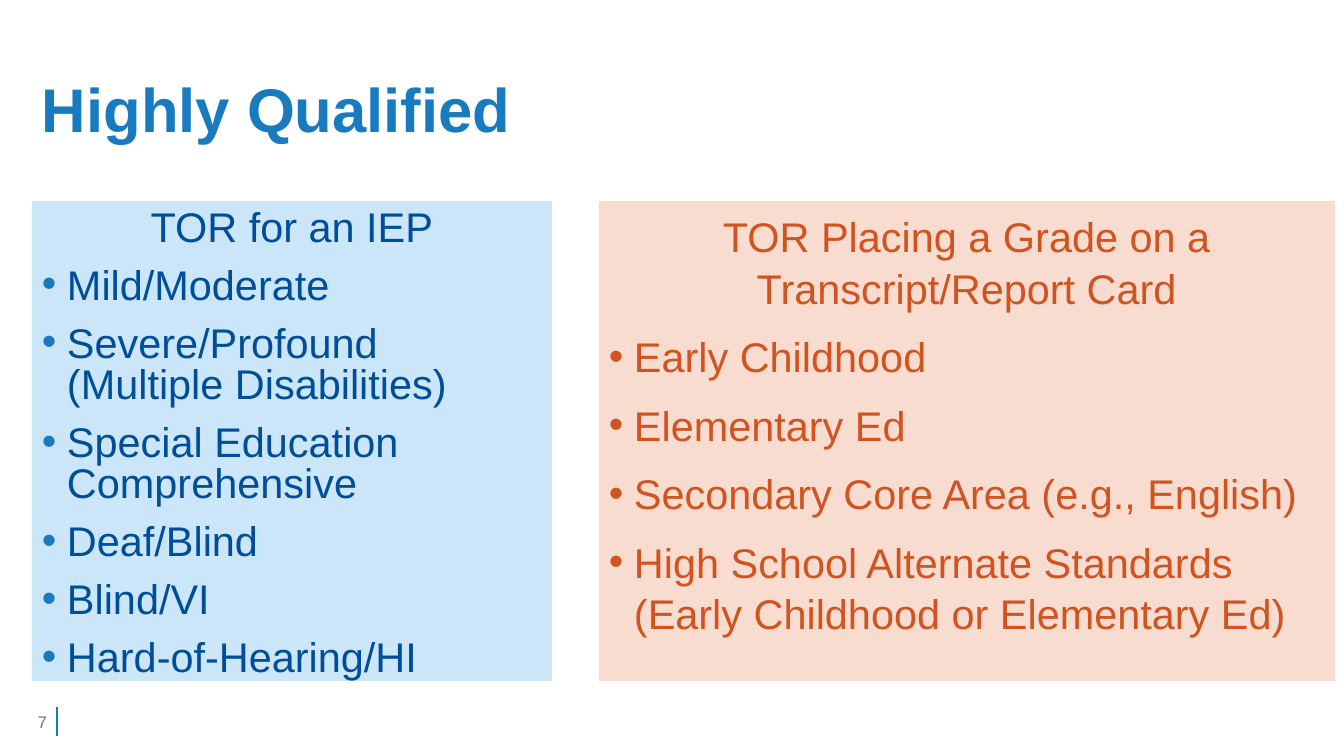
from lxml import etree
from pptx import Presentation
from pptx import util as u
from pptx.dml.color import RGBColor
from pptx.enum import shapes, text
from pptx.oxml import ns

TITLE = "Highly Qualified"
PAGE_NUMBER = "7"
PANELS = [
    dict(left=32, width=520, fill="iep_fill", color="iep_text", bullet="accent", spacing=0.83,
         heading="TOR for an IEP",
         items=["Mild/Moderate", "Severe/Profound (Multiple Disabilities)",
                "Special Education Comprehensive", "Deaf/Blind", "Blind/VI",
                "Hard-of-Hearing/HI"]),
    dict(left=599, width=736, fill="grade_fill", color="grade_text", bullet="grade_text", spacing=1.04,
         heading="TOR Placing a Grade on a Transcript/Report Card",
         items=["Early Childhood", "Elementary Ed", "Secondary Core Area (e.g., English)",
                "High School Alternate Standards (Early Childhood or Elementary Ed)"]),
]
THEME = dict(
    font="Arial", title_size=44, body_size=29.6, number_size=12, paragraph_gap=12,
    accent="187BC0", muted="787878",
    iep_fill="CBE6F8", iep_text="004E9A", grade_fill="F8DCD0", grade_text="D15420",
)
SLIDE_WIDTH, SLIDE_HEIGHT = 1344, 756
PANEL_TOP, PANEL_HEIGHT = 201, 480
INDENT = 25
EMU_PER_PX = 914400 / 100.8


def px(length):
    return u.Emu(round(length * EMU_PER_PX))


def rgb(name):
    return RGBColor.from_string(THEME[name])


def prepare_frame(shape, anchor, top=5):
    frame = shape.text_frame
    frame.word_wrap = True
    frame.vertical_anchor = anchor
    frame.margin_left = frame.margin_right = px(10)
    frame.margin_top, frame.margin_bottom = px(top), px(5)
    return frame


def add_bullet(paragraph, color):
    properties = paragraph._p.get_or_add_pPr()
    properties.set("marL", str(px(INDENT)))
    properties.set("indent", str(-px(INDENT)))
    bullet_color = etree.SubElement(properties, ns.qn("a:buClr"))
    etree.SubElement(bullet_color, ns.qn("a:srgbClr"), val=THEME[color])
    etree.SubElement(properties, ns.qn("a:buFont"), typeface=THEME["font"])
    etree.SubElement(properties, ns.qn("a:buChar"), char="•")


def write(frame, words, *, size, color, bold=False, align=text.PP_ALIGN.LEFT,
          spacing=1.0, bullet=None):
    first = not frame.paragraphs[0].runs
    paragraph = frame.paragraphs[0] if first else frame.add_paragraph()
    paragraph.alignment = align
    paragraph.line_spacing = spacing
    paragraph.space_before = u.Pt(0 if first else THEME["paragraph_gap"])
    if bullet:
        add_bullet(paragraph, bullet)
    run = paragraph.add_run()
    run.text = words
    run.font.name = THEME["font"]
    run.font.size = u.Pt(THEME[size])
    run.font.bold = bold
    run.font.color.rgb = rgb(color)


def add_panel(slide, panel):
    shape = slide.shapes.add_shape(
        shapes.MSO_SHAPE.RECTANGLE, px(panel["left"]), px(PANEL_TOP),
        px(panel["width"]), px(PANEL_HEIGHT))
    shape.shadow.inherit = False
    shape.fill.solid()
    shape.fill.fore_color.rgb = rgb(panel["fill"])
    shape.line.fill.background()
    frame = prepare_frame(shape, text.MSO_ANCHOR.TOP, top=8)
    style = dict(size="body_size", color=panel["color"], spacing=panel["spacing"])
    write(frame, panel["heading"], align=text.PP_ALIGN.CENTER, **style)
    for item in panel["items"]:
        write(frame, item, bullet=panel["bullet"], **style)


def add_footer(slide):
    rule = slide.shapes.add_connector(
        shapes.MSO_CONNECTOR.STRAIGHT, px(57), px(707), px(57), px(736))
    rule.line.color.rgb = rgb("accent")
    rule.line.width = u.Pt(1.5)
    etree.SubElement(rule._element.spPr, ns.qn("a:effectLst"))
    number = slide.shapes.add_textbox(px(0), px(702), px(57), px(40))
    write(prepare_frame(number, text.MSO_ANCHOR.MIDDLE), PAGE_NUMBER,
          size="number_size", color="muted", align=text.PP_ALIGN.RIGHT)


def main():
    presentation = Presentation()
    presentation.slide_width = px(SLIDE_WIDTH)
    presentation.slide_height = px(SLIDE_HEIGHT)
    slide = presentation.slides.add_slide(presentation.slide_layouts[6])
    title = slide.shapes.add_textbox(px(32), px(40), px(1279), px(146))
    write(prepare_frame(title, text.MSO_ANCHOR.MIDDLE), TITLE,
          size="title_size", color="accent", bold=True, spacing=0.9)
    for panel in PANELS:
        add_panel(slide, panel)
    add_footer(slide)
    presentation.save("out.pptx")


if __name__ == "__main__":
    main()
